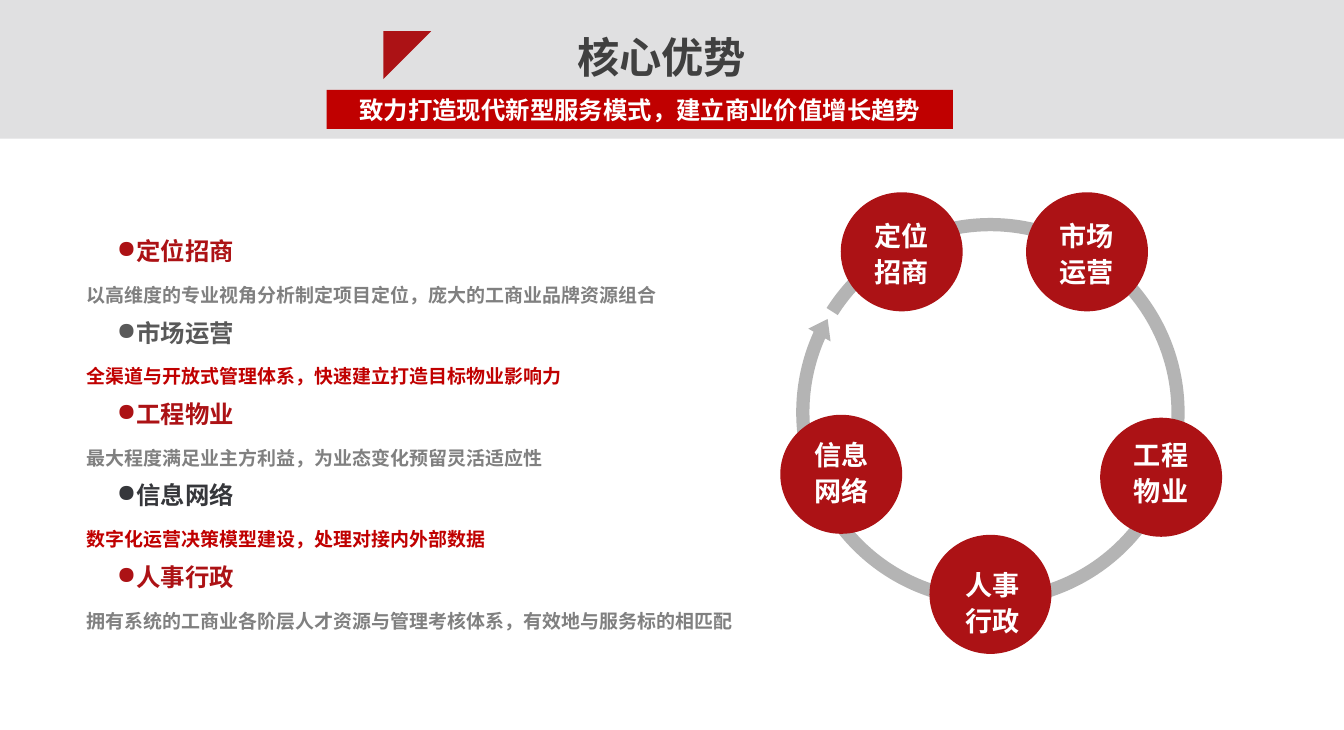
from dataclasses import dataclass

from lxml import etree
from pptx import Presentation
from pptx import util as u
from pptx.dml.color import RGBColor
from pptx.enum import shapes, text
from pptx.oxml.ns import qn

PX = 9144  # 100 px to the inch
FONT = "Arial"
CRIMSON, RED, WHITE = "AC1215", "C00000", "FFFFFF"
SILVER, GREY, DARK = "E0E0E1", "808080", "404040"
RING_GREY = "B4B4B4"
RING_ADJUSTMENTS = (3300, 330700, 13752000, 14242600, 3200)
CIRCLE_WIDTH, CIRCLE_HEIGHT = 125, 122


@dataclass(frozen=True)
class Box:
    left: int
    top: int
    width: int
    height: int

    def emu(self) -> tuple[u.Emu, ...]:
        return tuple(u.Emu(side * PX) for side in (self.left, self.top, self.width, self.height))


@dataclass(frozen=True)
class Advantage:
    name: str
    detail: str
    name_color: str
    detail_color: str


@dataclass(frozen=True)
class Stage:
    label: str
    left: int
    top: int
    label_dx: int = 0
    label_dy: int = 0


ADVANTAGES = (
    Advantage("定位招商", "以高维度的专业视角分析制定项目定位，庞大的工商业品牌资源组合", CRIMSON, GREY),
    Advantage("市场运营", "全渠道与开放式管理体系，快速建立打造目标物业影响力", "595959", RED),
    Advantage("工程物业", "最大程度满足业主方利益，为业态变化预留灵活适应性", CRIMSON, GREY),
    Advantage("信息网络", "数字化运营决策模型建设，处理对接内外部数据", "36373B", RED),
    Advantage("人事行政", "拥有系统的工商业各阶层人才资源与管理考核体系，有效地与服务标的相匹配", CRIMSON, GREY),
)

STAGES = (
    Stage("定位\n招商", 862, 197),
    Stage("市场\n运营", 1052, 197),
    Stage("工程\n物业", 1128, 428, label_dy=-6),
    Stage("人事\n行政", 953, 548, label_dx=2, label_dy=7),
    Stage("信息\n网络", 800, 425, label_dy=-3),
)


def rgb(color: str) -> RGBColor:
    return RGBColor.from_string(color)


def style_para(para, size: float, color: str, align=text.PP_ALIGN.CENTER) -> None:
    para.alignment = align
    for span in para.runs:
        span.font.name = FONT
        span.font.size = u.Pt(size)
        span.font.bold = True
        span.font.color.rgb = rgb(color)


def add_filled(page, kind, box: Box, color: str, rotation: float = 0):
    shape = page.shapes.add_shape(kind, *box.emu())
    shape.shadow.inherit = False
    shape.fill.solid()
    shape.fill.fore_color.rgb = rgb(color)
    shape.line.fill.background()
    shape.rotation = rotation
    return shape


def add_text_frame(page, box: Box):
    frame = page.shapes.add_textbox(*box.emu()).text_frame
    frame.word_wrap = True
    frame.vertical_anchor = text.MSO_ANCHOR.MIDDLE
    return frame


def add_bullet(para) -> None:
    properties = para._p.get_or_add_pPr()
    properties.set("marL", str(31 * PX))
    properties.set("indent", "0")
    etree.SubElement(properties, qn("a:buChar")).set("char", "●")


def draw_header(page) -> None:
    title = page.shapes.title
    band = add_filled(page, shapes.MSO_SHAPE.RECTANGLE, Box(0, 0, 1378, 142), SILVER)
    title.element.addprevious(band.element)
    add_filled(page, shapes.MSO_SHAPE.RIGHT_TRIANGLE, Box(393, 32, 49, 49), CRIMSON, 90)

    title.left, title.top, title.width, title.height = Box(402, 27, 553, 75).emu()
    title.text_frame.text = "核心优势"
    title.text_frame.auto_size = text.MSO_AUTO_SIZE.NONE
    title.text_frame.vertical_anchor = text.MSO_ANCHOR.TOP
    style_para(title.text_frame.paragraphs[0], 31.2, DARK)

    banner = add_filled(page, shapes.MSO_SHAPE.RECTANGLE, Box(335, 92, 642, 40), RED)
    banner.text_frame.text = "致力打造现代新型服务模式，建立商业价值增长趋势"
    style_para(banner.text_frame.paragraphs[0], 18, WHITE)


def draw_advantages(page) -> None:
    frame = add_text_frame(page, Box(79, 142, 689, 608))
    frame.text = "\n".join(f"{item.name}\n{item.detail}" for item in ADVANTAGES)
    names, details = frame.paragraphs[::2], frame.paragraphs[1::2]
    for item, name, detail in zip(ADVANTAGES, names, details):
        add_bullet(name)
        style_para(name, 18, item.name_color, text.PP_ALIGN.LEFT)
        style_para(detail, 14, item.detail_color, text.PP_ALIGN.LEFT)
    for index, para in enumerate(frame.paragraphs):
        para.line_spacing = u.Pt(20)
        para.space_before = u.Pt(10 if index else 0)


def draw_cycle(page) -> None:
    ring = add_filled(page, shapes.MSO_SHAPE.CIRCULAR_ARROW, Box(810, 217, 411, 411), RING_GREY, 335.1)
    for index, value in enumerate(RING_ADJUSTMENTS):
        ring.adjustments[index] = value / 100000
    for stage in STAGES:
        circle = Box(stage.left, stage.top, CIRCLE_WIDTH, CIRCLE_HEIGHT)
        add_filled(page, shapes.MSO_SHAPE.OVAL, circle, CRIMSON)
        label = Box(stage.left + stage.label_dx, stage.top + stage.label_dy, CIRCLE_WIDTH, CIRCLE_HEIGHT)
        frame = add_text_frame(page, label)
        frame.text = stage.label
        for para in frame.paragraphs:
            para.line_spacing = 1.1
            style_para(para, 20, WHITE)


def main() -> None:
    deck = Presentation()
    deck.slide_width, deck.slide_height = u.Emu(1378 * PX), u.Emu(748 * PX)
    page = deck.slides.add_slide(deck.slide_layouts.get_by_name("Title Only"))
    draw_header(page)
    draw_advantages(page)
    draw_cycle(page)
    deck.save("out.pptx")


if __name__ == "__main__":
    main()
